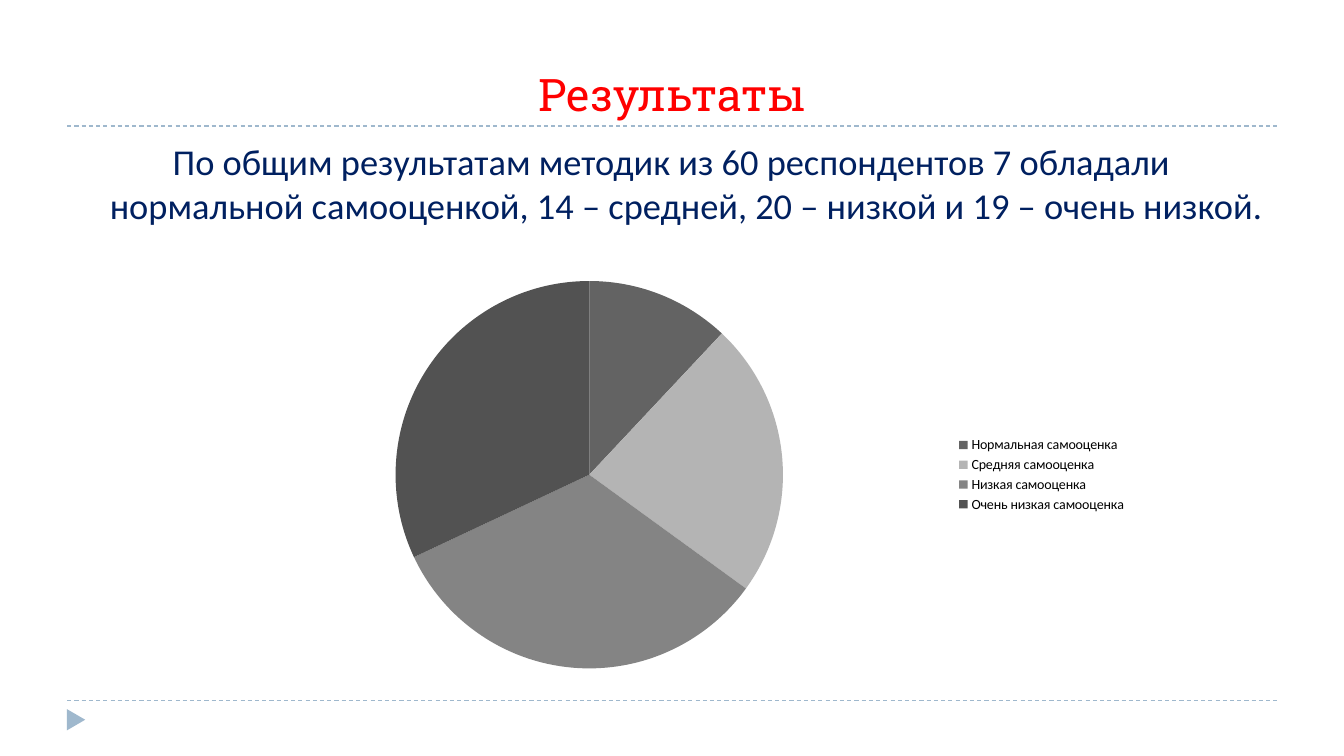
"""Build the survey results slide with a pie chart of self-esteem levels."""
from lxml import etree
from pptx import Presentation
from pptx.chart.data import CategoryChartData
from pptx.dml.color import RGBColor
from pptx.enum.chart import XL_CHART_TYPE, XL_LEGEND_POSITION
from pptx.enum.dml import MSO_LINE
from pptx.enum.shapes import MSO_CONNECTOR, MSO_SHAPE
from pptx.enum.text import MSO_ANCHOR, MSO_AUTO_SIZE, PP_ALIGN
from pptx.oxml.ns import qn
from pptx.util import Pt

PIE, RIGHT = XL_CHART_TYPE.PIE, XL_LEGEND_POSITION.RIGHT
STRAIGHT, TRIANGLE = MSO_CONNECTOR.STRAIGHT, MSO_SHAPE.ISOSCELES_TRIANGLE
TOP, BOTTOM, CENTER = MSO_ANCHOR.TOP, MSO_ANCHOR.BOTTOM, PP_ALIGN.CENTER
DASH, NO_FIT = MSO_LINE.DASH, MSO_AUTO_SIZE.NONE

COLORS = {"title": "FF0000", "body": "002060", "accent": "9FB8CD", "legend": "000000"}
TITLE = "Результаты"
SUMMARY = ("По общим результатам методик из 60 респондентов 7 обладали нормальной "
           "самооценкой, 14 – средней, 20 – низкой и 19 – очень низкой.")
LEVELS = [
    ("Нормальная самооценка", 12, "636363"),
    ("Средняя самооценка", 23, "B4B4B4"),
    ("Низкая самооценка", 33, "848484"),
    ("Очень низкая самооценка", 32, "525252"),
]
TITLE_FONT = {"name": "Roboto Slab", "size": Pt(32), "bold": False}
BODY_FONT = {"name": "Calibri", "size": Pt(26)}
LEGEND_FONT = {"name": "Calibri", "size": Pt(10)}
LEFT, WIDTH = 48, 864
RULES = (90, 500.4)
TITLE_AREA = (LEFT, 12.2, WIDTH, 77.8)
BODY_AREA = (LEFT, 96, WIDTH, 388.8)
CHART_AREA = (160, 190.8, 652, 296.6)
MARKER_AREA = (46.8, 507.6, 15.1, 13)


def points(values):
    return [Pt(value) for value in values]


def rgb(name):
    return RGBColor.from_string(COLORS.get(name, name))


def style(font, formats, color):
    for name, value in formats.items():
        setattr(font, name, value)
    font.color.rgb = rgb(color)


def write(box, text, formats, color, anchor):
    frame = box.text_frame
    frame.text = text
    frame.word_wrap = True
    frame.auto_size = NO_FIT
    frame.vertical_anchor = anchor
    para = frame.paragraphs[0]
    para.alignment = CENTER
    style(para.runs[0].font, formats, color)
    return para


def add_rules(page):
    for y in RULES:
        rule = page.shapes.add_connector(STRAIGHT, *points((LEFT, y, LEFT + WIDTH, y)))
        rule.line.color.rgb = rgb("accent")
        rule.line.width = Pt(0.75)
        rule.line.dash_style = DASH
        etree.SubElement(rule.element.spPr, qn("a:effectLst"))


def add_marker(page):
    marker = page.shapes.add_shape(TRIANGLE, *points(MARKER_AREA))
    marker.rotation = 90
    marker.shadow.inherit = False
    marker.fill.solid()
    marker.fill.fore_color.rgb = rgb("accent")
    marker.line.fill.background()


def add_text(page):
    title = page.shapes.title
    title.left, title.top, title.width, title.height = points(TITLE_AREA)
    write(title, TITLE, TITLE_FONT, "title", BOTTOM)
    body = page.shapes.add_textbox(*points(BODY_AREA))
    para = write(body, SUMMARY, BODY_FONT, "body", TOP)
    properties = para._p.get_or_add_pPr()
    properties.set("marL", str(Pt(21.6)))
    properties.set("indent", str(Pt(-21.6)))


def add_pie(page):
    data = CategoryChartData()
    data.categories = [name for name, value, color in LEVELS]
    data.add_series("Series 1", [value for name, value, color in LEVELS])
    chart = page.shapes.add_chart(PIE, *points(CHART_AREA), data).chart
    chart.has_title = False
    style(chart.font, LEGEND_FONT, "legend")
    chart.has_legend = True
    chart.legend.position = RIGHT
    chart.legend.include_in_layout = False
    plot = chart.plots[0]
    plot.vary_by_categories = True
    for index, (name, value, color) in enumerate(LEVELS):
        wedge = plot.series[0].points[index].format
        wedge.fill.solid()
        wedge.fill.fore_color.rgb = rgb(color)
        wedge.line.fill.background()


def main():
    deck = Presentation()
    deck.slide_width, deck.slide_height = points((960, 540))
    page = deck.slides.add_slide(deck.slide_layouts[5])
    add_rules(page)
    add_marker(page)
    add_text(page)
    add_pie(page)
    deck.save("out.pptx")


if __name__ == "__main__":
    main()
